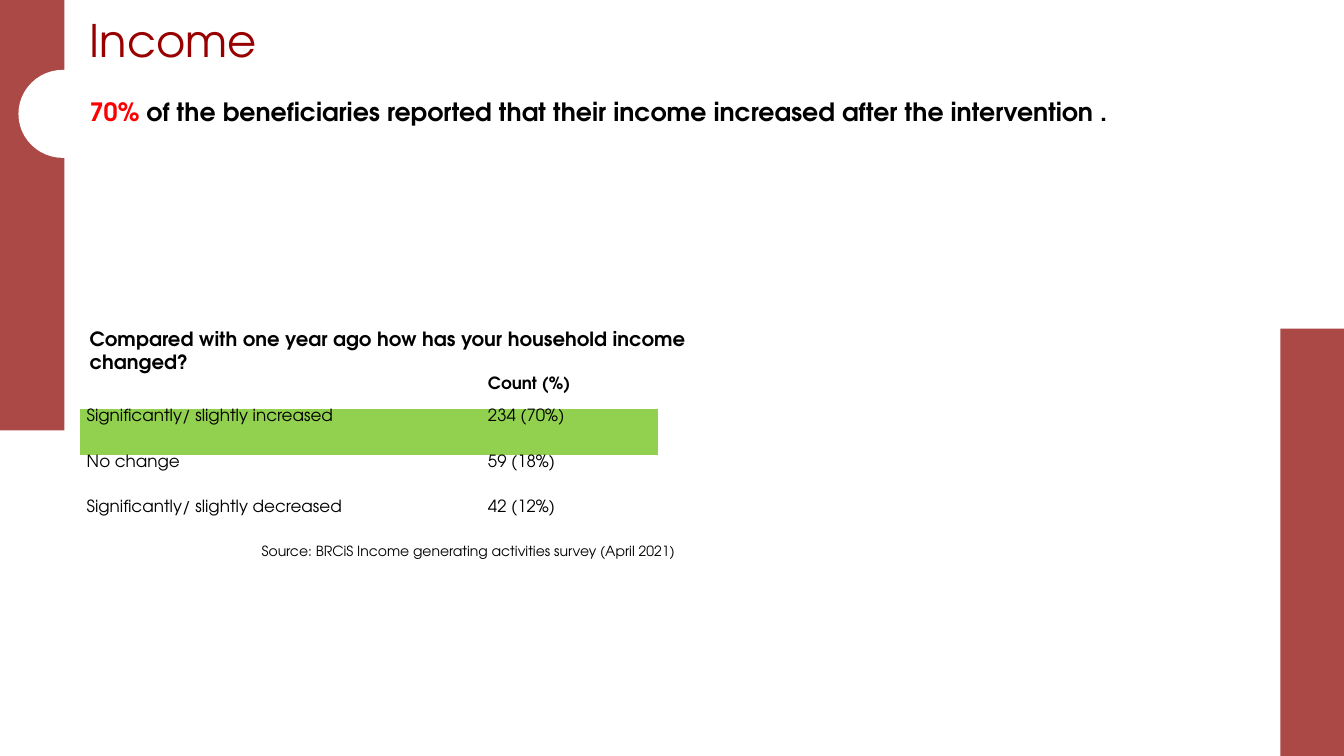
from pptx import Presentation
from pptx.dml.color import RGBColor
from pptx.enum.shapes import MSO_SHAPE as Shape
from pptx.enum.text import MSO_ANCHOR as Anchor, PP_ALIGN as Align
from pptx.util import Inches, Pt

FONT = "TeX Gyre Adventor"
COLORS = {
    "panel": "AB4946",
    "white": "FFFFFF",
    "title": "980000",
    "text": "000000",
    "accent": "FF0000",
    "highlight": "92D050",
}
NO_STYLE_ID = "{2D5ABB26-0587-4C30-8999-92F81FD0307C}"
INCOME_ROWS = [
    ("", "Count (%)"),
    ("Significantly/ slightly increased", "234 (70%)"),
    ("No change", "59 (18%)"),
    ("Significantly/ slightly decreased", "42 (12%)"),
]
COLUMN_WIDTHS = (3.98, 1.76)
ROW_HEIGHTS = (0.5, 0.45, 0.45, 0.5)
HEADER_ROW, HIGHLIGHT_ROW = 0, 1
HEADER_GAP = 0.16


def color(name):
    """Return the named palette colour."""
    return RGBColor.from_string(COLORS[name])


def style_font(font, size, color_name="text", bold=False):
    """Apply the slide typeface with a size, colour and weight."""
    font.name = FONT
    font.size = Pt(size)
    font.bold = bold
    font.color.rgb = color(color_name)


def add_block(slide, kind, box, color_name):
    """Draw a plain filled decoration."""
    block = slide.shapes.add_shape(kind, *map(Inches, box))
    block.shadow.inherit = False
    block.fill.solid()
    block.fill.fore_color.rgb = color(color_name)
    block.line.fill.background()
    return block


def add_text(slide, box, runs, size, bold=False, align=Align.LEFT,
             anchor=Anchor.TOP, line_spacing=None):
    """Add a wrapped paragraph made of (text, colour name) runs."""
    frame = slide.shapes.add_textbox(*map(Inches, box)).text_frame
    frame.word_wrap = True
    frame.vertical_anchor = anchor
    paragraph = frame.paragraphs[0]
    paragraph.alignment = align
    paragraph.line_spacing = line_spacing
    for text, color_name in runs:
        run = paragraph.add_run()
        run.text = text
        style_font(run.font, size, color_name, bold)


def fill_cell(cell, text, is_header, is_highlighted):
    """Write and format one cell of the income table."""
    cell.margin_left = cell.margin_right = Inches(0.07)
    cell.margin_top = 0
    cell.margin_bottom = Inches(HEADER_GAP if is_header else 0)
    cell.vertical_anchor = Anchor.BOTTOM if is_header else Anchor.TOP
    cell.text_frame.text = text
    style_font(cell.text_frame.paragraphs[0].font, 12, bold=is_header)
    if is_highlighted:
        cell.fill.solid()
        cell.fill.fore_color.rgb = color("highlight")
    else:
        cell.fill.background()


def add_income_table(slide, left, top):
    """Add the table of answers about household income."""
    size = (sum(COLUMN_WIDTHS), sum(ROW_HEIGHTS))
    frame = slide.shapes.add_table(len(ROW_HEIGHTS), len(COLUMN_WIDTHS),
                                   *map(Inches, (left, top, *size)))
    frame.element.xpath(".//a:tableStyleId")[0].text = NO_STYLE_ID
    table = frame.table
    table.first_row = table.horz_banding = False
    for column, width in zip(table.columns, COLUMN_WIDTHS):
        column.width = Inches(width)
    for index, (row, height) in enumerate(zip(table.rows, ROW_HEIGHTS)):
        row.height = Inches(height)
        for cell, text in zip(row.cells, INCOME_ROWS[index]):
            fill_cell(cell, text, index == HEADER_ROW, index == HIGHLIGHT_ROW)


def main():
    """Build the income slide and save it."""
    deck = Presentation()
    deck.slide_width, deck.slide_height = Inches(13.33), Inches(7.5)
    slide = deck.slides.add_slide(deck.slide_layouts[6])

    add_block(slide, Shape.RECTANGLE, (0, 0, 0.64, 4.27), "panel")
    add_block(slide, Shape.RECTANGLE, (12.7, 3.26, 0.63, 4.24), "panel")
    notch = add_block(slide, Shape.OVAL, (0.19, 0.7, 0.87, 0.86), "white")
    notch.line.color.rgb = color("white")
    notch.line.width = Pt(1)

    add_text(slide, (0.79, 0.07, 11.01, 0.71), [("Income", "title")], 32,
             anchor=Anchor.MIDDLE, line_spacing=0.9)
    add_text(slide, (0.79, 3.19, 6.12, 0.57),
             [("Compared with one year ago how has your household income changed?", "text")],
             14, bold=True)
    add_income_table(slide, 0.79, 3.56)
    add_text(slide, (2.02, 5.33, 4.77, 0.27),
             [("Source: BRCiS Income generating activities survey (April 2021)", "text")],
             10, align=Align.RIGHT)
    add_text(slide, (0.79, 0.91, 12.37, 0.71),
             [("70%", "accent"),
              (" of the beneficiaries reported that their income increased"
               " after the intervention .", "text")],
             18, bold=True)
    deck.save("out.pptx")


if __name__ == "__main__":
    main()
